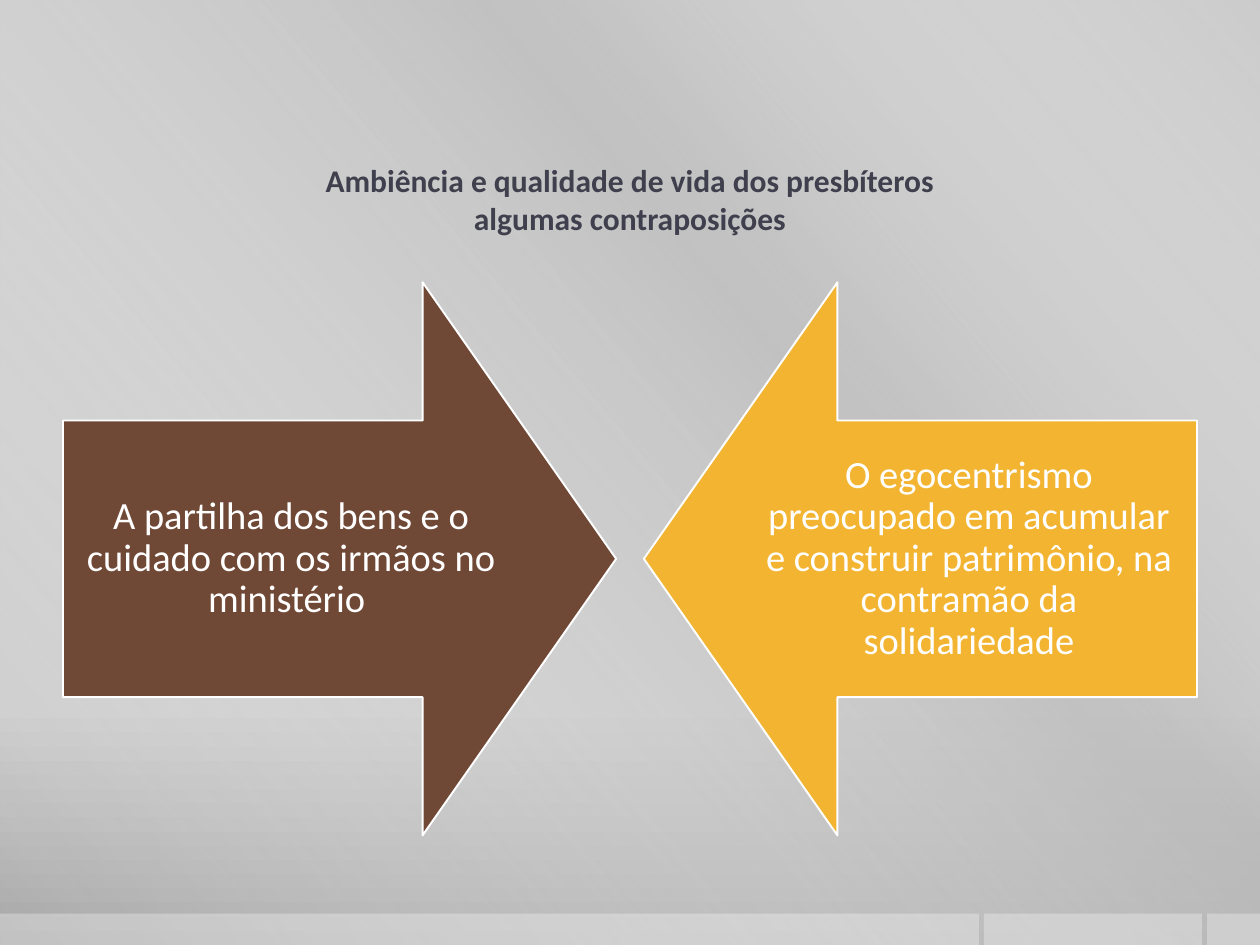
from dataclasses import dataclass

from lxml.etree import SubElement
from pptx import Presentation
from pptx.dml.color import RGBColor
from pptx.enum.shapes import MSO_SHAPE as Preset
from pptx.enum.text import MSO_ANCHOR as Anchor, MSO_AUTO_SIZE as AutoSize, PP_ALIGN as Align
from pptx.oxml.ns import qn
from pptx.util import Inches, Pt

WIDTH, HEIGHT = 10, 7.5
MARGIN = 0.05 * WIDTH
FONT = "Calibri"

WHITE = RGBColor(0xFF, 0xFF, 0xFF)
SILVER = RGBColor(0xCB, 0xCB, 0xCB)
LIGHT_GRAY = RGBColor(0xC8, 0xC8, 0xC8)
MID_GRAY = RGBColor(0xBF, 0xBF, 0xBF)
DARK_GRAY = RGBColor(0xA7, 0xA7, 0xA7)
SLATE = RGBColor(0x3F, 0x3F, 0x4D)
BROWN = RGBColor(0x70, 0x48, 0x36)
AMBER = RGBColor(0xF2, 0xB4, 0x31)

ARROW_SIZE = 4.39
ARROW_TOP = 2.24
ARROW_ADJUSTMENTS = (0.5, 0.35)
LABEL_WIDTH = 3.62
LABEL_INSET = 0.17
FOOTER_HEIGHT = 0.25
FOOTER_COLUMNS = ((9.58, 10), (7.81, 9.54), (0, 7.77))


@dataclass(frozen=True)
class Stop:
    position: int
    color: RGBColor
    opacity: int = 100


@dataclass(frozen=True)
class OpposingArrow:
    text: str
    color: RGBColor
    rotation: int
    on_right: bool

    def left(self, width: float) -> float:
        return WIDTH - MARGIN - width if self.on_right else MARGIN


BACKDROP = (Stop(0, SILVER), Stop(76, LIGHT_GRAY), Stop(100, DARK_GRAY))
SHEEN = (Stop(0, WHITE, 0), Stop(34, MID_GRAY, 61), Stop(38, MID_GRAY, 76), Stop(100, WHITE, 0))
TITLE_LINES = ("Ambiência e qualidade de vida dos presbíteros", "algumas contraposições")
ARROWS = (
    OpposingArrow("A partilha dos bens e o cuidado com os irmãos no ministério ",
                  BROWN, 270, False),
    OpposingArrow("O egocentrismo preocupado em acumular e construir patrimônio, "
                  "na contramão da solidariedade", AMBER, 90, True),
)


def add_opacity(color_element, percent: int) -> None:
    SubElement(color_element, qn("a:alpha"), val=str(percent * 1000))


def set_gradient(fill, owner, stops: tuple, clockwise_angle: int) -> None:
    fill.gradient()
    fill.gradient_angle = 360 - clockwise_angle
    stop_list = next(owner.iter(qn("a:gsLst")))
    for old_stop in list(stop_list):
        stop_list.remove(old_stop)
    for stop in stops:
        entry = SubElement(stop_list, qn("a:gs"), pos=str(stop.position * 1000))
        color = SubElement(entry, qn("a:srgbClr"), val=str(stop.color))
        if stop.opacity < 100:
            add_opacity(color, stop.opacity)


def add_preset(slide, preset: Preset, left: float, top: float, width: float, height: float):
    shape = slide.shapes.add_shape(preset, Inches(left), Inches(top), Inches(width), Inches(height))
    shape.shadow.inherit = False
    shape.line.fill.background()
    return shape


def draw_backdrop(slide) -> None:
    set_gradient(slide.background.fill, slide.element, BACKDROP, 90)
    sheen = add_preset(slide, Preset.RECTANGLE, 0, 0, WIDTH, HEIGHT)
    set_gradient(sheen.fill, sheen.element, SHEEN, 140)
    for start, end in FOOTER_COLUMNS:
        strip = add_preset(slide, Preset.RECTANGLE, start, HEIGHT - FOOTER_HEIGHT,
                           end - start, FOOTER_HEIGHT)
        strip.fill.solid()
        strip.fill.fore_color.rgb = WHITE
        add_opacity(next(strip.element.spPr.iter(qn("a:srgbClr"))), 30)


def prepare_frame(box, inset_x: float, inset_y: float):
    frame = box.text_frame
    frame.word_wrap = True
    frame.auto_size = AutoSize.NONE
    frame.vertical_anchor = Anchor.MIDDLE
    frame.margin_left = frame.margin_right = Inches(inset_x)
    frame.margin_top = frame.margin_bottom = Inches(inset_y)
    para = frame.paragraphs[0]
    para.alignment = Align.CENTER
    return para


def add_span(para, text: str, size: int, color: RGBColor, bold: bool = False) -> None:
    span = para.add_run()
    span.text = text
    span.font.name = FONT
    span.font.size = Pt(size)
    span.font.bold = bold
    span.font.color.rgb = color


def draw_title(slide) -> None:
    title = slide.shapes.title
    title.left, title.top = Inches(MARGIN), Inches(1.08)
    title.width, title.height = Inches(WIDTH - 2 * MARGIN), Inches(1)
    para = prepare_frame(title, 0, 0.05)
    for index, line in enumerate(TITLE_LINES):
        if index:
            para.add_line_break()
        add_span(para, line, 18, SLATE, bold=True)
    slide.shapes.element.append(title.element)


def draw_arrow(slide, arrow: OpposingArrow) -> None:
    shape = add_preset(slide, Preset.DOWN_ARROW, arrow.left(ARROW_SIZE), ARROW_TOP,
                       ARROW_SIZE, ARROW_SIZE)
    shape.rotation = arrow.rotation
    for index, value in enumerate(ARROW_ADJUSTMENTS):
        shape.adjustments[index] = value
    shape.fill.solid()
    shape.fill.fore_color.rgb = arrow.color
    shape.line.color.rgb = WHITE
    shape.line.width = Pt(1.1)

    label = slide.shapes.add_textbox(
        Inches(arrow.left(LABEL_WIDTH)), Inches(ARROW_TOP + ARROW_SIZE / 4),
        Inches(LABEL_WIDTH), Inches(ARROW_SIZE / 2))
    para = prepare_frame(label, LABEL_INSET, LABEL_INSET)
    para.line_spacing = 0.9
    add_span(para, arrow.text, 22, WHITE)


def main() -> None:
    deck = Presentation()
    deck.slide_width, deck.slide_height = Inches(WIDTH), Inches(HEIGHT)
    page = deck.slides.add_slide(deck.slide_layouts[5])
    draw_backdrop(page)
    draw_title(page)
    for arrow in ARROWS:
        draw_arrow(page, arrow)
    deck.save("out.pptx")


if __name__ == "__main__":
    main()
